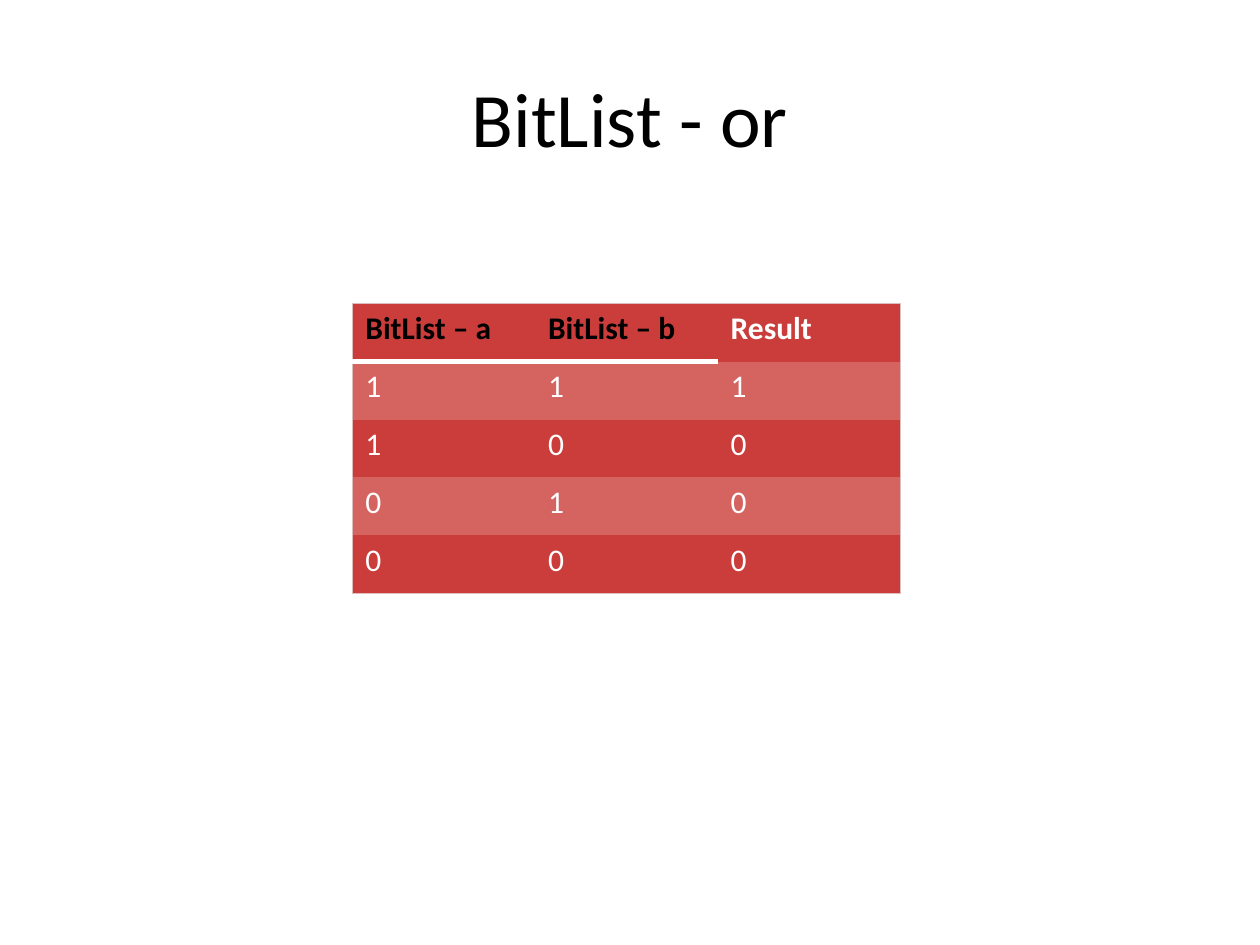
"""Build the BitList "or" slide with its truth table."""
from dataclasses import dataclass
from typing import Optional

from pptx import Presentation
from pptx.dml.color import RGBColor
from pptx.enum.text import MSO_ANCHOR, PP_ALIGN
from pptx.oxml.ns import qn
from pptx.util import Inches, Pt
from lxml.etree import SubElement


@dataclass(frozen=True)
class Theme:
    font: str = "Calibri"
    title_size: int = 44
    cell_size: int = 18
    ink: str = "000000"
    paper: str = "FFFFFF"
    base: str = "CB3D3A"
    band: str = "D56461"
    frame: str = "DEBDBD"


@dataclass(frozen=True)
class Border:
    color: str
    width: float


@dataclass(frozen=True)
class Grid:
    left: float
    top: float
    column: float
    row: float


THEME = Theme()
FRAME = Border(THEME.frame, 0.75)
RULE = Border(THEME.paper, 3)
GRID = Grid(left=2.8, top=2.41, column=1.45, row=0.46)
OPERANDS = 2
TRUTH_TABLE = (
    ("BitList – a", "BitList – b", "Result"),
    ("1", "1", "1"),
    ("1", "0", "0"),
    ("0", "1", "0"),
    ("0", "0", "0"),
)


def add_run(text_frame, text: str, size: int, color: str, bold: bool = False) -> None:
    """Add one formatted run to the first paragraph."""
    run = text_frame.paragraphs[0].add_run()
    run.text = text
    run.font.name = THEME.font
    run.font.size = Pt(size)
    run.font.bold = bold
    run.font.color.rgb = RGBColor.from_string(color)


def add_border(cell, side: str, border: Optional[Border]) -> None:
    """Draw one side of a cell, or switch that side off."""
    properties = cell._tc.get_or_add_tcPr()
    line = SubElement(properties, qn(f"a:ln{side}"))
    if border is None:
        SubElement(line, qn("a:noFill"))
        return
    line.set("w", str(Pt(border.width)))
    fill = SubElement(line, qn("a:solidFill"))
    SubElement(fill, qn("a:srgbClr")).set("val", border.color)


def add_title(slide, text: str) -> None:
    """Place and format the title."""
    title = slide.shapes.title
    title.left, title.top = Inches(0.5), Inches(0.3)
    title.width, title.height = Inches(9), Inches(1.25)
    title.text_frame.vertical_anchor = MSO_ANCHOR.MIDDLE
    title.text_frame.paragraphs[0].alignment = PP_ALIGN.CENTER
    add_run(title.text_frame, text, THEME.title_size, THEME.ink)


def format_cell(cell, text: str, row: int, column: int) -> None:
    """Write a cell with the text, borders and band of its position."""
    last_row, last_column = len(TRUTH_TABLE) - 1, len(TRUTH_TABLE[0]) - 1
    header, operand = row == 0, column < OPERANDS
    rule = RULE if operand else None
    borders = {
        "L": FRAME if column == 0 else None,
        "R": FRAME if column == last_column else None,
        "T": FRAME if header else rule if row == 1 else None,
        "B": rule if header else FRAME if row == last_row else None,
    }
    for side, border in borders.items():
        add_border(cell, side, border)
    cell.fill.solid()
    cell.fill.fore_color.rgb = RGBColor.from_string(THEME.band if row % 2 else THEME.base)
    color = THEME.ink if header and operand else THEME.paper
    add_run(cell.text_frame, text, THEME.cell_size, color, bold=header)


def add_truth_table(slide, grid: Grid) -> None:
    """Add the table of operands and results."""
    rows, columns = len(TRUTH_TABLE), len(TRUTH_TABLE[0])
    table = slide.shapes.add_table(
        rows, columns, Inches(grid.left), Inches(grid.top),
        Inches(columns * grid.column), Inches(rows * grid.row),
    ).table
    for row, texts in enumerate(TRUTH_TABLE):
        for column, text in enumerate(texts):
            format_cell(table.cell(row, column), text, row, column)


def main() -> None:
    """Build and save the slide."""
    presentation = Presentation()
    presentation.slide_width, presentation.slide_height = Inches(10), Inches(7.5)
    slide = presentation.slides.add_slide(presentation.slide_layouts.get_by_name("Title Only"))
    add_title(slide, "BitList - or")
    add_truth_table(slide, GRID)
    presentation.save("out.pptx")


if __name__ == "__main__":
    main()
